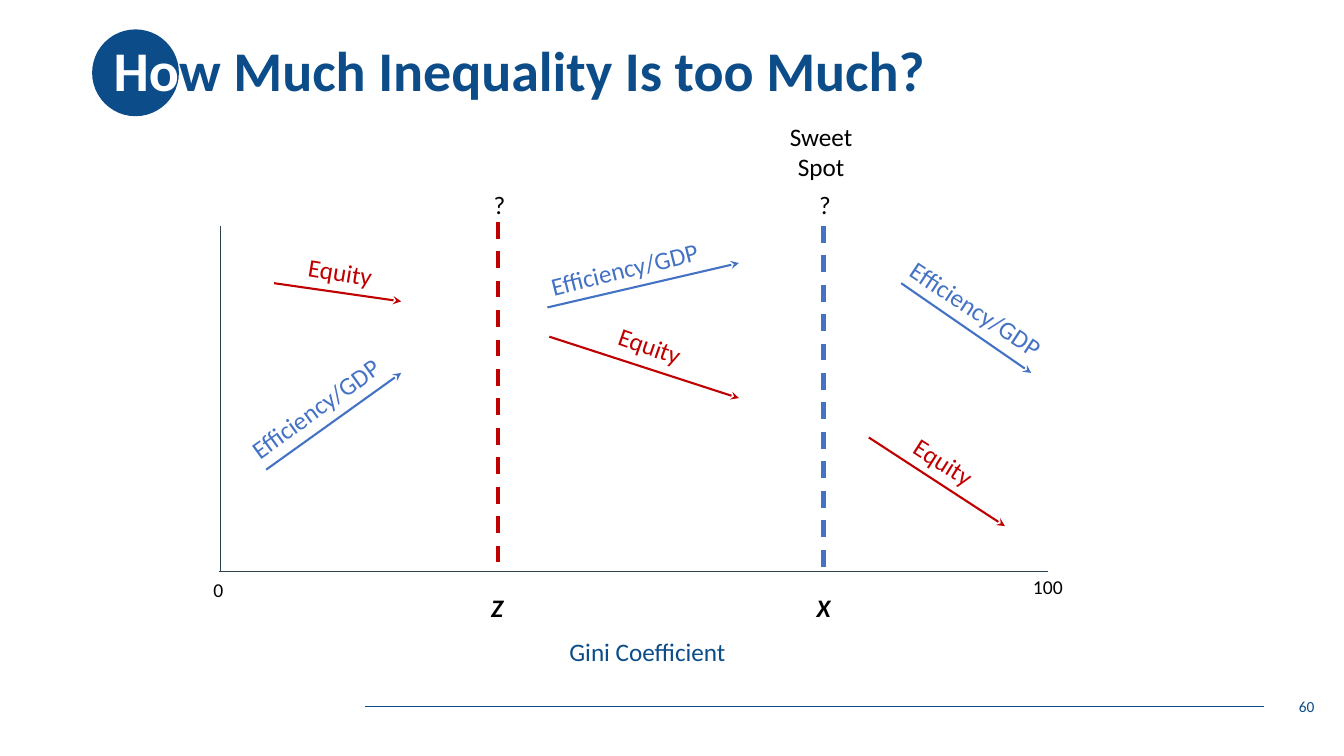
from dataclasses import dataclass

from lxml import etree
from pptx import Presentation
from pptx.dml.color import RGBColor
from pptx.enum import dml, shapes, text
from pptx.oxml import ns
from pptx.util import Pt


@dataclass(frozen=True)
class Theme:
    font: str = "Calibri"
    navy: str = "0C4C88"
    axis: str = "2B414D"
    blue: str = "4472C4"
    red: str = "C00000"
    black: str = "000000"
    white: str = "FFFFFF"
    title_size: int = 40
    label_size: int = 18
    tick_size: int = 14
    number_size: int = 11


THEME = Theme()
EFFICIENCY = ("Efficiency/GDP", THEME.blue)
EQUITY = ("Equity", THEME.red)

# (label, colour), arrow start and end, label left, top, width and rotation
TRENDS = [
    (EQUITY, (195.8, 202.3, 286.6, 215.3), (213.1, 180, 65.5), 9.3),
    (EFFICIENCY, (190.1, 335.5, 286.6, 266.4), (164.2, 276.5, 123.8), 324.2),
    (EFFICIENCY, (391, 219.6, 527.8, 187.9), (385.2, 176.4, 131), 346),
    (EQUITY, (392.4, 240.5, 527.8, 284.4), (434.2, 233.3, 65.5), 19.4),
    (EFFICIENCY, (643.7, 202.3, 736.6, 266.4), (635.8, 208.1, 128.9), 33.4),
    (EQUITY, (620.6, 312.5, 717.8, 375.8), (643.7, 316.8, 65.5), 32.6),
]

# name, colour, x, top, bottom
THRESHOLDS = [
    ("Z", THEME.red, 355.7, 158.4, 404.6),
    ("X", THEME.blue, 588.2, 161.3, 408.2),
]


def format_run(run, size, color, bold=False, italic=False):
    font = run.font
    font.name, font.size = THEME.font, Pt(size)
    font.bold, font.italic = bold, italic
    font.color.rgb = RGBColor.from_string(color)


def add_text(slide, content, left, top, width, height=29, size=THEME.label_size,
             color=THEME.black, bold=False, italic=False, wrap=False, rotation=0,
             align=text.PP_ALIGN.LEFT, anchor=text.MSO_ANCHOR.TOP):
    """Add a text box with one paragraph for each line of content."""
    box = slide.shapes.add_textbox(Pt(left), Pt(top), Pt(width), Pt(height))
    box.rotation = rotation
    frame = box.text_frame
    frame.word_wrap = wrap
    frame.auto_size = text.MSO_AUTO_SIZE.SHAPE_TO_FIT_TEXT
    frame.vertical_anchor = anchor
    frame.text = content
    for paragraph in frame.paragraphs:
        paragraph.alignment = align
        for run in paragraph.runs:
            format_run(run, size, color, bold, italic)


def add_line(slide, x1, y1, x2, y2, color, width, dashed=False, arrow=False):
    connector = slide.shapes.add_connector(
        shapes.MSO_CONNECTOR.STRAIGHT, Pt(x1), Pt(y1), Pt(x2), Pt(y2))
    line = connector.line
    line.color.rgb = RGBColor.from_string(color)
    line.width = Pt(width)
    if dashed:
        line.dash_style = dml.MSO_LINE.DASH
    if arrow:
        etree.SubElement(line._get_or_add_ln(), ns.qn("a:tailEnd"), type="stealth")
    etree.SubElement(connector.element.spPr, ns.qn("a:effectLst"))


def add_title(slide):
    """Fill the title and set the navy disc behind its first letters."""
    title = slide.shapes.title
    title.left, title.top, title.width, title.height = Pt(74), Pt(0), Pt(828), Pt(104.4)
    frame = title.text_frame
    frame.vertical_anchor = text.MSO_ANCHOR.MIDDLE
    paragraph = frame.paragraphs[0]
    paragraph.alignment = text.PP_ALIGN.LEFT
    paragraph.line_spacing = 0.9
    for content, color in (("Ho", THEME.white),
                           ("w Much Inequality Is too Much?", THEME.navy)):
        run = paragraph.add_run()
        run.text = content
        format_run(run, THEME.title_size, color, bold=True)

    disc = slide.shapes.add_shape(
        shapes.MSO_SHAPE.OVAL, Pt(65.8), Pt(21), Pt(62), Pt(62))
    disc.shadow.inherit = False
    disc.fill.solid()
    disc.fill.fore_color.rgb = RGBColor.from_string(THEME.navy)
    disc.line.fill.background()
    title.element.addprevious(disc.element)


def add_axes(slide):
    add_line(slide, 157.7, 161.3, 157.7, 408.2, THEME.axis, 1)
    add_line(slide, 156.2, 408.2, 748.8, 408.2, THEME.axis, 1)
    add_text(slide, "0", 145.4, 409, 21.6, 24.5, size=THEME.tick_size)
    add_text(slide, "100", 730.8, 407, 36, 24.5, size=THEME.tick_size)
    add_text(slide, "Gini Coefficient", 399.6, 450.7, 128.2, color=THEME.navy)


def add_threshold(slide, name, color, x, top, bottom):
    add_line(slide, x, top, x, bottom, color, 3, dashed=True)
    add_text(slide, name, x - 12, 419.8, 24, bold=True, italic=True)
    add_text(slide, "?", x - 10.2, 131.8, 23)


def add_trend(slide, kind, arrow, label_box, rotation):
    label, color = kind
    add_line(slide, *arrow, color, 1.5, arrow=True)
    add_text(slide, label, *label_box, color=color, wrap=True, rotation=rotation)


def add_footer(slide):
    add_line(slide, 260.6, 504.7, 902.9, 504.7, THEME.navy, 0.5)
    add_text(slide, "60", 730, 490.3, 216, size=THEME.number_size, color=THEME.navy,
             wrap=True, align=text.PP_ALIGN.RIGHT, anchor=text.MSO_ANCHOR.MIDDLE)


def main():
    presentation = Presentation()
    presentation.slide_width, presentation.slide_height = Pt(960), Pt(540)
    slide = presentation.slides.add_slide(presentation.slide_layouts[5])
    add_title(slide)
    add_footer(slide)
    add_axes(slide)
    for threshold in THRESHOLDS:
        add_threshold(slide, *threshold)
    for trend in TRENDS:
        add_trend(slide, *trend)
    add_text(slide, "Sweet\nSpot", 556.6, 82.8, 59.8, 51, align=text.PP_ALIGN.CENTER)
    presentation.save("out.pptx")


if __name__ == "__main__":
    main()
